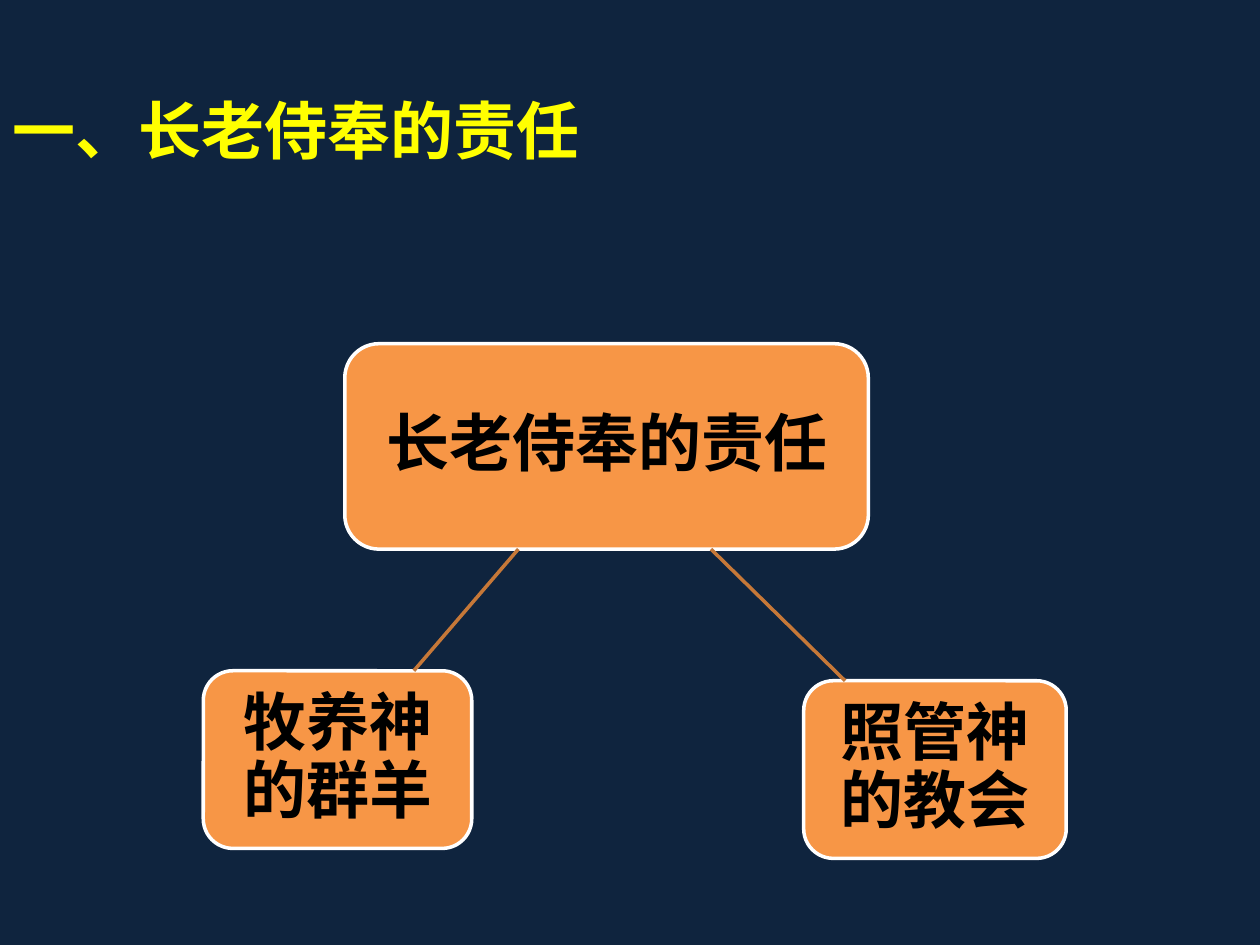
from lxml.etree import SubElement
from pptx import Presentation
from pptx.dml.color import RGBColor
from pptx.enum.lang import MSO_LANGUAGE_ID as Language
from pptx.enum.shapes import MSO_CONNECTOR as Connector, MSO_SHAPE as Preset
from pptx.enum.text import MSO_ANCHOR as Anchor, PP_ALIGN as Align
from pptx.oxml.ns import qn
from pptx.util import Pt

COLORS = {
    "background": "0F243E",
    "box": "F79646",
    "border": "FFFFFF",
    "branch": "C67838",
    "label": "000000",
    "title": "FFFF00",
}


def color(name):
    return RGBColor.from_string(COLORS[name])


def write_text(shape, text, font_name, color_name):
    shape.text_frame.word_wrap = True
    shape.text_frame.text = text
    paragraph = shape.text_frame.paragraphs[0]
    font = paragraph.runs[0].font
    font.size = Pt(36)
    font.bold = True
    font.color.rgb = color(color_name)
    font.name = font_name
    font.language_id = Language.SIMPLIFIED_CHINESE
    SubElement(font._element, qn("a:ea")).set("typeface", font_name)
    return paragraph


presentation = Presentation()
presentation.slide_width = Pt(720)
presentation.slide_height = Pt(540)
slide = presentation.slides.add_slide(presentation.slide_layouts[6])
slide.background.fill.solid()
slide.background.fill.fore_color.rgb = color("background")

boxes = [
    ("长老侍奉的责任", 197, 196.4, 299.2, 117.4),
    ("照管神的教会", 459.3, 389, 150, 101.5),
    ("牧养神的群羊", 116.2, 383.3, 153.4, 101.5),
]
for label, left, top, width, height in boxes:
    box = slide.shapes.add_shape(
        Preset.ROUNDED_RECTANGLE, Pt(left), Pt(top), Pt(width), Pt(height)
    )
    box.shadow.inherit = False
    box.fill.solid()
    box.fill.fore_color.rgb = color("box")
    box.line.color.rgb = color("border")
    box.line.width = Pt(2)
    frame = box.text_frame
    frame.margin_left = frame.margin_right = Pt(7.2)
    frame.margin_top = frame.margin_bottom = Pt(7.2)
    frame.vertical_anchor = Anchor.MIDDLE
    paragraph = write_text(box, label, "Calibri", "label")
    paragraph.alignment = Align.CENTER
    paragraph.line_spacing = 0.9

branches = [(406.3, 313.8, 482.9, 389), (296.2, 313.8, 236.5, 383.3)]
for start_x, start_y, end_x, end_y in branches:
    branch = slide.shapes.add_connector(
        Connector.STRAIGHT, Pt(start_x), Pt(start_y), Pt(end_x), Pt(end_y)
    )
    branch.line.color.rgb = color("branch")
    branch.line.width = Pt(2)
    SubElement(branch._element.spPr, qn("a:effectLst"))

title = slide.shapes.add_textbox(Pt(0), Pt(49), Pt(485.3), Pt(147.6))
title.text_frame.vertical_anchor = Anchor.TOP
write_text(title, "一、长老侍奉的责任", "Noto Sans CJK SC", "title")

presentation.save("out.pptx")
